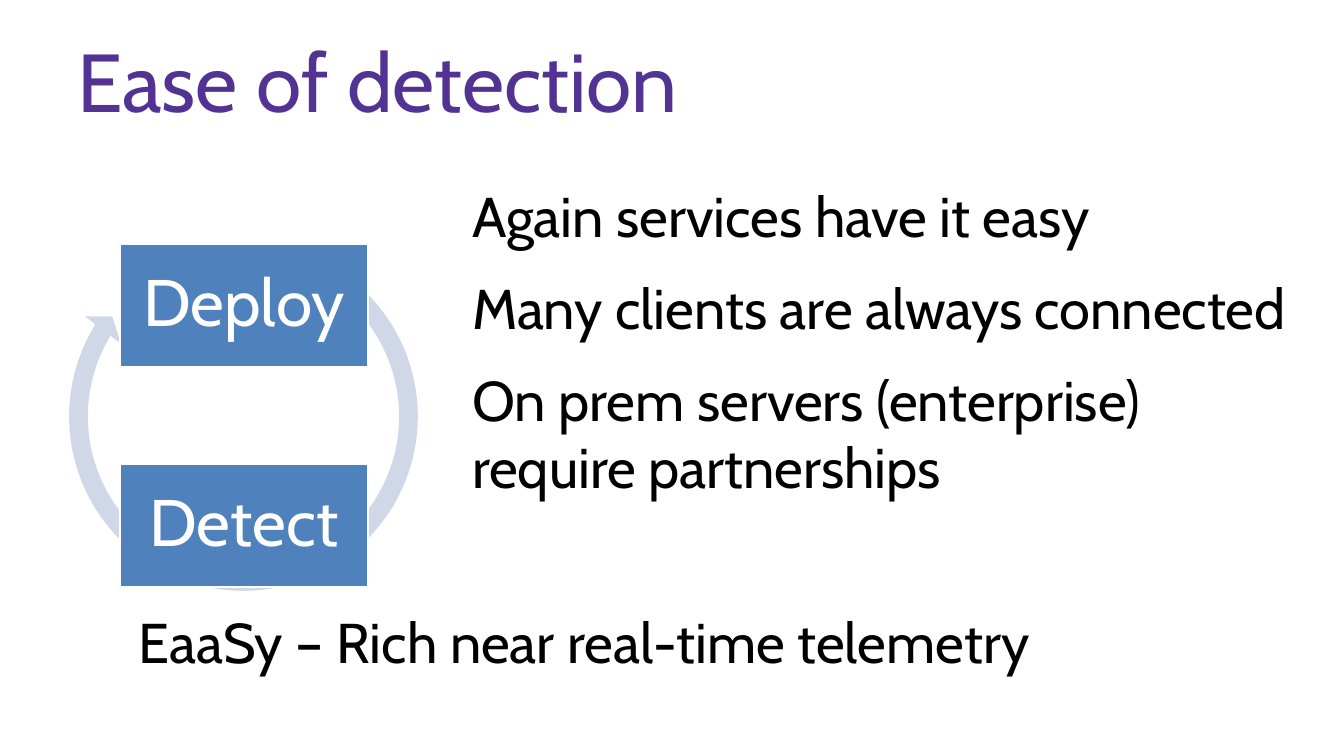
"""Build the "Ease of detection" slide with its deploy and detect cycle."""
from pptx import Presentation
from pptx.dml.color import RGBColor
from pptx.enum.shapes import MSO_SHAPE
from pptx.enum.text import MSO_ANCHOR, MSO_AUTO_SIZE, PP_ALIGN
from pptx.oxml.ns import qn
from pptx.util import Pt

TITLE = "Ease of detection"
POINTS = [
    "Again services have it easy",
    "Many clients are always connected",
    "On prem servers (enterprise) require partnerships",
]
STEPS = ["Deploy", "Detect"]
SUMMARY = "EaaSy – Rich near real-time telemetry"

FONT = "Cabin"
PURPLE = RGBColor(0x52, 0x33, 0x94)
BLACK = RGBColor(0, 0, 0)
WHITE = RGBColor(0xFF, 0xFF, 0xFF)
BLUE = RGBColor(0x4F, 0x81, 0xBD)
PALE_BLUE = RGBColor(0xD0, 0xD8, 0xE8)

PX = 914400 / 100.8
TITLE_BOX = (67, 17, 1210, 126)
POINTS_BOX = (462, 176, 849, 504)
SUMMARY_BOX = (-68, 603, 1107, 78)
ARROW_BOX = (56, 229, 375, 375)
ARROW_ADJ = (0.05, 3.44, 126.96, 180.75, 0.06)
STEP_X, STEP_Y, STEP_W, STEP_H, STEP_PITCH = 120, 244, 248, 123, 220


def emu(*lengths):
    return [round(n * PX) for n in lengths]


def place(shape, box):
    shape.left, shape.top, shape.width, shape.height = emu(*box)


def add_text(p, text, size, color, align=PP_ALIGN.LEFT):
    p.alignment = align
    r = p.add_run()
    r.text = text
    r.font.name = FONT
    r.font.size = Pt(size)
    r.font.color.rgb = color


def add_shape(s, kind, box, fill):
    sp = s.shapes.add_shape(kind, *emu(*box))
    sp.shadow.inherit = False
    sp.fill.solid()
    sp.fill.fore_color.rgb = fill
    sp.line.fill.background()
    return sp


def add_cycle(s):
    arrow = add_shape(s, MSO_SHAPE.CIRCULAR_ARROW, ARROW_BOX, PALE_BLUE)
    for i, value in enumerate(ARROW_ADJ):
        arrow.adjustments[i] = value
    for i, step in enumerate(STEPS):
        box = (STEP_X, STEP_Y + i * STEP_PITCH, STEP_W, STEP_H)
        sp = add_shape(s, MSO_SHAPE.RECTANGLE, box, BLUE)
        sp.line.color.rgb = WHITE
        sp.line.width = Pt(2)
        tf = sp.text_frame
        tf.vertical_anchor = MSO_ANCHOR.MIDDLE
        tf.margin_left = tf.margin_right = tf.margin_top = tf.margin_bottom = emu(20)[0]
        p = tf.paragraphs[0]
        p.line_spacing = 0.9
        add_text(p, step, 47, WHITE, PP_ALIGN.CENTER)


def add_points(body):
    place(body, POINTS_BOX)
    tf = body.text_frame
    tf.auto_size = MSO_AUTO_SIZE.NONE
    for i, point in enumerate(POINTS):
        p = tf.add_paragraph() if i else tf.paragraphs[0]
        pPr = p._p.get_or_add_pPr()
        pPr.set("marL", "0")
        pPr.set("indent", "0")
        pPr.append(pPr.makeelement(qn("a:buNone"), {}))
        p.space_before = Pt(0)
        p.space_after = Pt(18)
        add_text(p, point, 40, BLACK)


def main():
    prs = Presentation()
    prs.slide_width, prs.slide_height = emu(1344, 756)
    s = prs.slides.add_slide(prs.slide_layouts[1])

    title = s.shapes.title
    place(title, TITLE_BOX)
    title.text_frame.auto_size = MSO_AUTO_SIZE.NONE
    title.text_frame.vertical_anchor = MSO_ANCHOR.MIDDLE
    add_text(title.text_frame.paragraphs[0], TITLE, 58.7, PURPLE)

    add_cycle(s)

    tf = s.shapes.add_textbox(*emu(*SUMMARY_BOX)).text_frame
    tf.word_wrap = True
    tf.auto_size = MSO_AUTO_SIZE.SHAPE_TO_FIT_TEXT
    add_text(tf.paragraphs[0], SUMMARY, 40, BLACK, PP_ALIGN.RIGHT)

    add_points(s.placeholders[1])
    prs.save("out.pptx")


if __name__ == "__main__":
    main()
